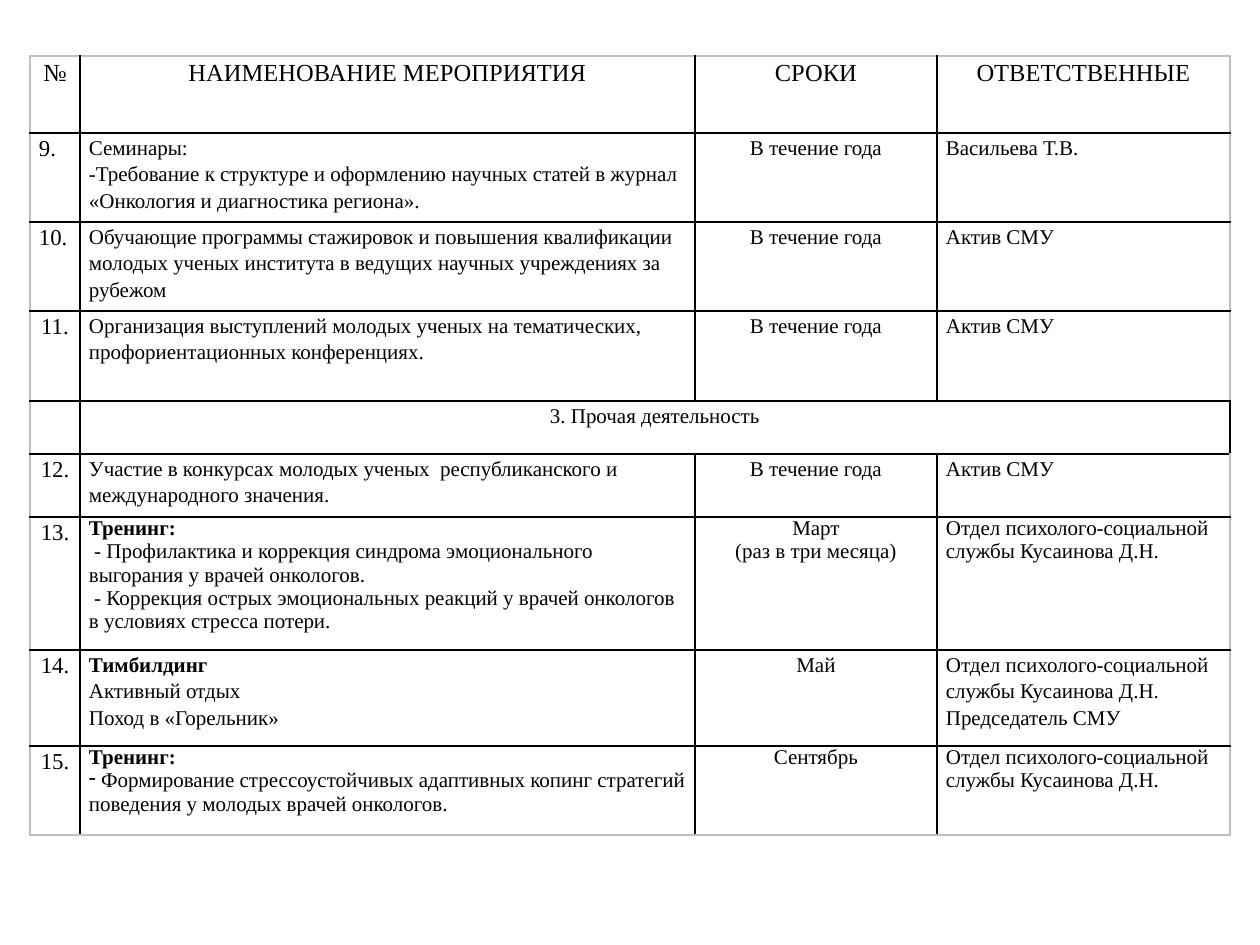
from lxml.etree import SubElement as Sub, Element as Elem
from pptx import Presentation as Deck
from pptx.dml.color import RGBColor as Rgb
from pptx.enum.text import PP_ALIGN as Al
from pptx.oxml.ns import qn
from pptx.util import Emu, Pt

PX = 914400 // 126
BLACK = Rgb(0, 0, 0)
GRAY = Rgb(0xBF, 0xBF, 0xBF)
FONT = "Times New Roman"
PAD = 9
LOOSE, TIGHT = 1.15, 1.0

COLS = [50, 615, 242, 293]
HEAD = ["№", "НАИМЕНОВАНИЕ МЕРОПРИЯТИЯ", "СРОКИ", "ОТВЕТСТВЕННЫЕ"]
HEAD_H = 77
YEAR = ["В течение года"]
TEAM = ["Актив СМУ"]
DEPT = "Отдел психолого-социальной службы Кусаинова Д.Н."

# height, number, number alignment, line spacing, task, term, people
ROWS = [
    (89, "9.", Al.LEFT, LOOSE,
     ["Семинары:",
      "-Требование к структуре и оформлению научных статей в журнал "
      "«Онкология и диагностика региона»."],
     YEAR, ["Васильева Т.В."]),
    (89, "10.", Al.LEFT, LOOSE,
     ["Обучающие программы стажировок и повышения квалификации молодых "
      "ученых института в ведущих научных учреждениях за рубежом"],
     YEAR, TEAM),
    (90, "11.", Al.CENTER, LOOSE,
     ["Организация выступлений молодых ученых на тематических, "
      "профориентационных конференциях."],
     YEAR, TEAM),
    (53, "", Al.CENTER, LOOSE, ["3. Прочая деятельность"], [], []),
    (63, "12.", Al.CENTER, LOOSE,
     ["Участие в конкурсах молодых ученых  республиканского и "
      "международного значения."],
     YEAR, TEAM),
    (133, "13.", Al.CENTER, TIGHT,
     ["*Тренинг:",
      " - Профилактика и коррекция синдрома эмоционального выгорания "
      "у врачей онкологов.",
      " - Коррекция острых эмоциональных реакций у врачей онкологов "
      "в условиях стресса потери."],
     ["Март", "(раз в три месяца)"], [DEPT]),
    (96, "14.", Al.CENTER, LOOSE,
     ["*Тимбилдинг", "Активный отдых", "Поход в «Горельник»"],
     ["Май"], [DEPT, "Председатель СМУ"]),
    (89, "15.", Al.CENTER, TIGHT,
     ["*Тренинг:",
      "•Формирование стрессоустойчивых адаптивных копинг стратегий "
      "поведения у молодых врачей онкологов."],
     ["Сентябрь"], [DEPT]),
]


def px(n):
    return Emu(n * PX)


def dash(par):
    prop = par._p.get_or_add_pPr()
    prop.set("marL", "0")
    prop.set("indent", "0")
    Sub(prop, qn("a:buChar")).set("char", "-")


def write(cell, lines, size, align=Al.LEFT, gap=LOOSE):
    frame = cell.text_frame
    for i, line in enumerate(lines):
        par = frame.add_paragraph() if i else frame.paragraphs[0]
        par.alignment = align
        par.line_spacing = gap
        if line.startswith("•"):
            dash(par)
            line = " " + line[1:]
        run = par.add_run()
        run.text = line.removeprefix("*")
        font = run.font
        font.name, font.size = FONT, Pt(size)
        font.bold = line.startswith("*")
        font.color.rgb = BLACK


def frame_cell(cell, edges):
    cell.margin_left = cell.margin_right = px(PAD)
    cell.margin_top = cell.margin_bottom = 0
    cell.fill.background()
    prop = cell._tc.get_or_add_tcPr()
    for i, (side, outer) in enumerate(zip("LRTB", edges)):
        line = Elem(qn("a:ln" + side), w=str(Pt(1)))
        fill = Sub(line, qn("a:solidFill"))
        Sub(fill, qn("a:srgbClr")).set("val", str(GRAY if outer else BLACK))
        prop.insert(i, line)


def plan(slide, x, y, w, h):
    last, end = len(ROWS), len(COLS) - 1
    table = slide.shapes.add_table(
        last + 1, end + 1, px(x), px(y), px(w), px(h)).table
    table.first_row = table.horz_banding = False
    for col, wide in zip(table.columns, COLS):
        col.width = px(wide)
    for row, high in zip(table.rows, [HEAD_H] + [r[0] for r in ROWS]):
        row.height = px(high)
    for r in range(last + 1):
        for c in range(end + 1):
            frame_cell(table.cell(r, c), (c == 0, c == end, r == 0, r == last))
    for c, name in enumerate(HEAD):
        write(table.cell(0, c), [name], 14, Al.CENTER)
    for r, (_, num, side, gap, task, term, team) in enumerate(ROWS, 1):
        if num:
            write(table.cell(r, 0), [num], 13, side)
            write(table.cell(r, 1), task, 12, gap=gap)
            write(table.cell(r, 2), term, 12, Al.CENTER, gap)
            write(table.cell(r, 3), team, 12, gap=gap)
        else:
            table.cell(r, 1).merge(table.cell(r, end))
            write(table.cell(r, 1), task, 12, Al.CENTER)


def main():
    deck = Deck()
    deck.slide_width, deck.slide_height = px(1260), px(945)
    slide = deck.slides.add_slide(deck.slide_layouts[6])
    plan(slide, 30, 56, sum(COLS), HEAD_H + sum(r[0] for r in ROWS))
    deck.save("out.pptx")


if __name__ == "__main__":
    main()
